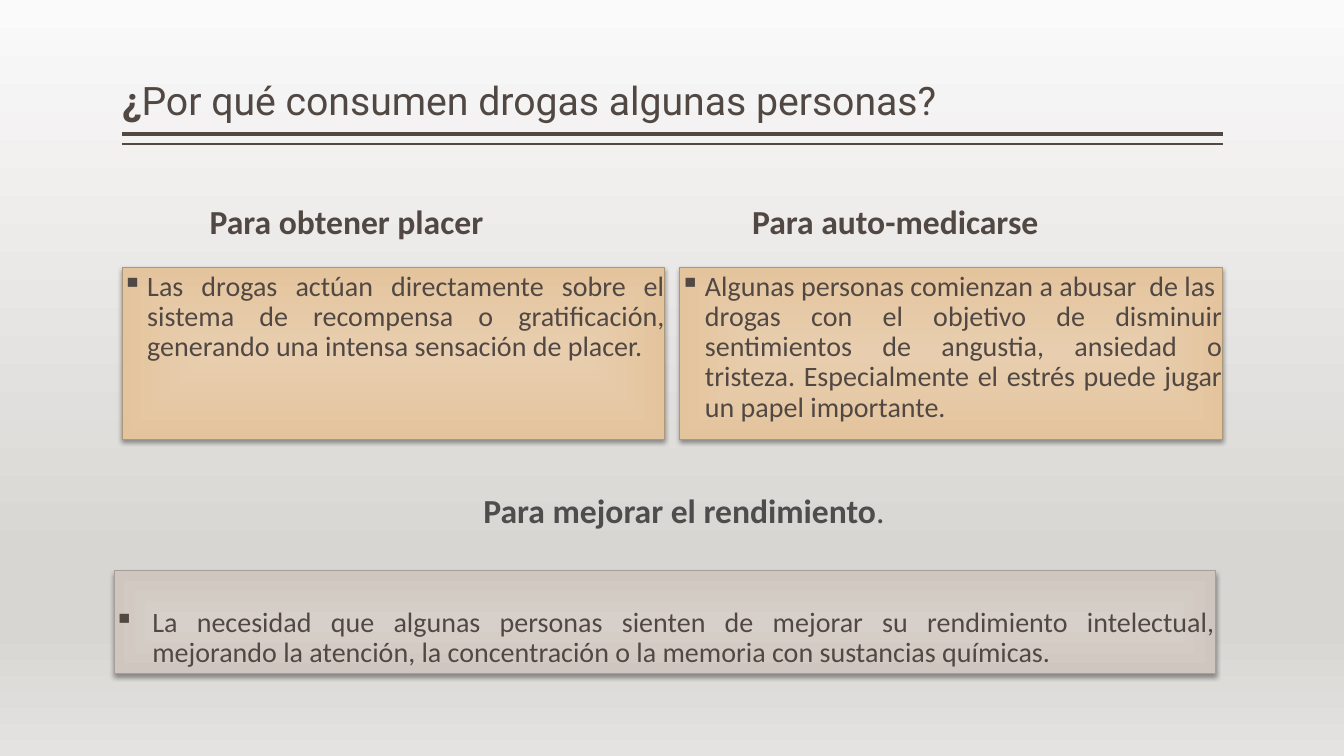
from dataclasses import dataclass

from lxml.etree import SubElement
from pptx import Presentation
from pptx.dml.color import RGBColor
from pptx.enum.shapes import MSO_CONNECTOR, MSO_SHAPE
from pptx.enum.text import MSO_ANCHOR, PP_ALIGN
from pptx.oxml.ns import qn
from pptx.util import Inches, Pt


@dataclass(frozen=True)
class Theme:
    ink: str = "514843"
    gray: str = "4D4D4D"
    background: tuple = ((0, "FBFAFA"), (74, "D8D6D3"), (83, "D8D6D3"), (100, "E5E3E2"))
    sand: tuple = ((0, "E8CEAF"), (100, "E4C49D"))
    sand_edge: str = "AB977A"
    stone: tuple = ((0, "D7D0CA"), (100, "CFC7BF"))
    stone_edge: str = "A59F9A"
    title_font: str = "Roboto"
    body_font: str = "Calibri"
    title_size: int = 28
    heading_size: int = 24
    body_size: int = 20


THEME = Theme()
WIDTH, HEIGHT = Inches(13.33), Inches(7.5)
COLUMN, ROW = WIDTH / 100, HEIGHT / 100
LEFT, CONTENT = 9.08, 81.92
CARD, CARD_STEP = 40.36, 41.5
CARD_TOP, CARD_ROWS = 35.33, 22.8
HEADING_TOP, HEADING_ROWS = 20.67, 12


def place(left, top, width, height):
    return round(left * COLUMN), round(top * ROW), round(width * COLUMN), round(height * ROW)


def paint_gradient(fill, owner, stops, from_center=False):
    fill.gradient()
    gradient = next(owner.iter(qn("a:gradFill")))
    for child in list(gradient):
        gradient.remove(child)
    stop_list = SubElement(gradient, qn("a:gsLst"))
    for position, color in stops:
        stop = SubElement(stop_list, qn("a:gs"), pos=str(position * 1000))
        SubElement(stop, qn("a:srgbClr"), val=color)
    if from_center:
        rectangle = SubElement(gradient, qn("a:path"), {"path": "rect"})
        SubElement(rectangle, qn("a:fillToRect"), dict.fromkeys("ltrb", "50000"))
    else:
        SubElement(gradient, qn("a:lin"), ang="5400000", scaled="0")


def add_shadow(shape):
    shape.shadow.inherit = False
    effects = shape._element.spPr.find(qn("a:effectLst"))
    shadow = SubElement(effects, qn("a:outerShdw"), blurRad=str(Pt(3.5)),
                        dist=str(Pt(2)), dir="5400000", rotWithShape="0")
    color = SubElement(shadow, qn("a:srgbClr"), val="000000")
    SubElement(color, qn("a:alpha"), val="38000")


def set_font(font, name, size, color):
    font.name, font.size = name, Pt(size)
    font.color.rgb = RGBColor.from_string(color)


def set_frame(frame, anchor):
    frame.word_wrap = True
    frame.vertical_anchor = anchor
    frame.margin_left = frame.margin_right = 0
    frame.margin_top = frame.margin_bottom = Inches(0.05)


def add_label(slide, box, runs, name, size, color):
    frame = slide.shapes.add_textbox(*place(*box)).text_frame
    set_frame(frame, MSO_ANCHOR.BOTTOM)
    paragraph = frame.paragraphs[0]
    paragraph.line_spacing = 0.9
    set_font(paragraph.font, name, size, color)
    for text, bold in runs:
        run = paragraph.add_run()
        run.text = text
        set_font(run.font, name, size, color)
        run.font.bold = bold
    return paragraph


def add_card(slide, box, text, stops, edge, indent, anchor=MSO_ANCHOR.TOP):
    card = slide.shapes.add_shape(MSO_SHAPE.RECTANGLE, *place(*box))
    paint_gradient(card.fill, card._element.spPr, stops, from_center=True)
    card.line.color.rgb = RGBColor.from_string(edge)
    card.line.width = Pt(0.5)
    add_shadow(card)
    set_frame(card.text_frame, anchor)
    paragraph = card.text_frame.paragraphs[0]
    paragraph.text = text
    paragraph.alignment = PP_ALIGN.JUSTIFY
    paragraph.line_spacing = 0.9
    set_font(paragraph.font, THEME.body_font, THEME.body_size, THEME.ink)
    properties = paragraph._p.get_or_add_pPr()
    properties.set("marL", str(Inches(indent)))
    properties.set("indent", str(-Inches(indent)))
    bullet = properties.makeelement(qn("a:buChar"), {"char": "▪"})
    properties.find(qn("a:defRPr")).addprevious(bullet)


def add_rule(slide, row, weight):
    left, top, width, _ = place(LEFT, row, CONTENT, 0)
    rule = slide.shapes.add_connector(MSO_CONNECTOR.STRAIGHT, left, top, left + width, top)
    rule.line.color.rgb = RGBColor.from_string(THEME.ink)
    rule.line.width = Pt(weight)
    SubElement(rule._element.spPr, qn("a:effectLst"))


def main():
    presentation = Presentation()
    presentation.slide_width, presentation.slide_height = WIDTH, HEIGHT
    slide = presentation.slides.add_slide(presentation.slide_layouts[6])
    paint_gradient(slide.background.fill, slide._element, THEME.background)

    add_rule(slide, 17.73, 3)
    add_rule(slide, 19.07, 1)
    add_label(slide, (LEFT, 1.07, CONTENT, 16),
              [("¿", True), ("Por qué consumen drogas algunas personas?", False)],
              THEME.title_font, THEME.title_size, THEME.ink)

    reasons = [
        ("Para obtener placer", 15.6,
         "Las drogas actúan directamente sobre el sistema de recompensa o gratificación, "
         "generando una intensa sensación de placer."),
        ("Para auto-medicarse", 55.96,
         "Algunas personas comienzan a abusar  de las  drogas con el objetivo de disminuir "
         "sentimientos de angustia, ansiedad o tristeza. Especialmente el estrés puede jugar "
         "un papel importante."),
    ]
    for index, (heading, heading_left, text) in enumerate(reasons):
        add_label(slide, (heading_left, HEADING_TOP, 25.88, HEADING_ROWS), [(heading, True)],
                  THEME.body_font, THEME.heading_size, THEME.ink)
        add_card(slide, (LEFT + index * CARD_STEP, CARD_TOP, CARD, CARD_ROWS), text,
                 THEME.sand, THEME.sand_edge, 0.25)

    add_card(slide, (8.48, 75.47, CONTENT, 13.6),
             "La necesidad que algunas personas sienten de mejorar su rendimiento intelectual, "
             "mejorando la atención, la concentración o la memoria con sustancias químicas.",
             THEME.stone, THEME.stone_edge, 0.38, MSO_ANCHOR.BOTTOM)
    closing = add_label(slide, (35.33, 64.13, 31.13, 6.67),
                        [("Para mejorar el rendimiento", True), (".", False)],
                        THEME.body_font, THEME.heading_size, THEME.gray)
    closing.alignment = PP_ALIGN.CENTER
    closing.line_spacing = 1.0

    presentation.save("out.pptx")


if __name__ == "__main__":
    main()
